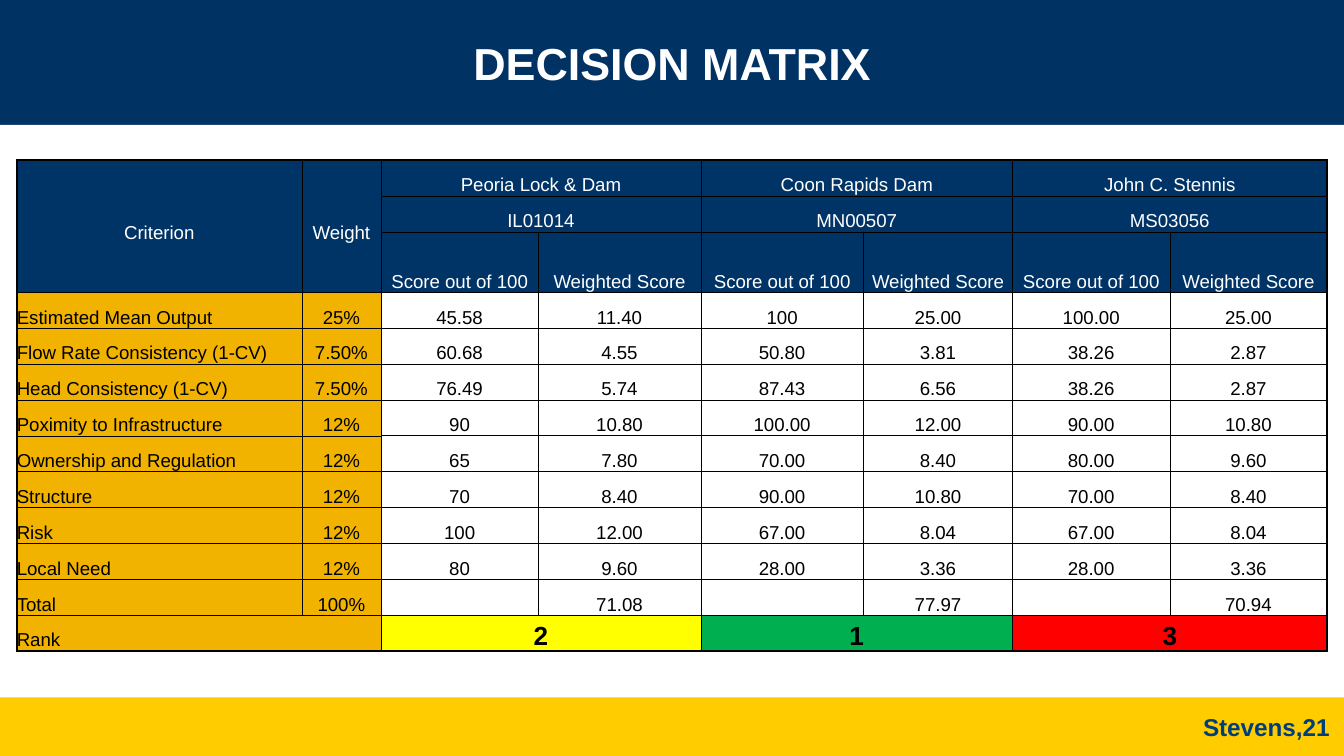
from pptx import Presentation
from pptx.dml.color import RGBColor
from pptx.enum.shapes import MSO_SHAPE
from pptx.enum.text import MSO_ANCHOR, MSO_AUTO_SIZE, PP_ALIGN
from pptx.oxml import parse_xml
from pptx.oxml.ns import nsdecls
from pptx.util import Inches, Pt

COLORS = {
    "banner": "003264", "header": "003366", "footer": "FFCC00",
    "footer_text": "003D7C", "label": "F1B300", "white": "FFFFFF",
    "black": "000000", "second": "FFFF00", "first": "00B050", "third": "FF0000",
}
FONT = "Arial"
NO_STYLE = "{2D5ABB26-0587-4C30-8999-92F81FD0307C}"
COLS = [2.12, 0.59, 1.17, 1.21, 1.21, 1.11, 1.17, 1.17]
LINE = Pt(19.2)
SCORES = ["Score out of 100", "Weighted Score"] * 3
ROWS = [
    ["Criterion", "Weight", "Peoria Lock & Dam", "", "Coon Rapids Dam", "", "John C. Stennis", ""],
    ["", "", "IL01014", "", "MN00507", "", "MS03056", ""],
    ["", ""] + SCORES,
    ["Estimated Mean Output", "25%", "45.58", "11.40", "100", "25.00", "100.00", "25.00"],
    ["Flow Rate Consistency (1-CV)", "7.50%", "60.68", "4.55", "50.80", "3.81", "38.26", "2.87"],
    ["Head Consistency (1-CV)", "7.50%", "76.49", "5.74", "87.43", "6.56", "38.26", "2.87"],
    ["Poximity to Infrastructure", "12%", "90", "10.80", "100.00", "12.00", "90.00", "10.80"],
    ["Ownership and Regulation", "12%", "65", "7.80", "70.00", "8.40", "80.00", "9.60"],
    ["Structure", "12%", "70", "8.40", "90.00", "10.80", "70.00", "8.40"],
    ["Risk", "12%", "100", "12.00", "67.00", "8.04", "67.00", "8.04"],
    ["Local Need", "12%", "80", "9.60", "28.00", "3.36", "28.00", "3.36"],
    ["Total", "100%", "", "71.08", "", "77.97", "", "70.94"],
    ["Rank", "", "2", "", "1", "", "3", ""],
]
HEADER_ROWS = 3
RANK_ROW = len(ROWS) - 1
RANK_FILLS = {2: "second", 4: "first", 6: "third"}
MERGES = [(0, c, HEADER_ROWS, c + 1) for c in (0, 1)]
MERGES += [(r, c, r + 1, c + 2) for r in (0, 1) for c in (2, 4, 6)]
MERGES += [(RANK_ROW, c, RANK_ROW + 1, c + 2) for c in (0, 2, 4, 6)]


def rgb(name):
    return RGBColor.from_string(COLORS[name])


def add_run(p, text, size, color, bold=False):
    r = p.add_run()
    r.text = text
    r.font.name = FONT
    r.font.size = Pt(size)
    r.font.bold = bold
    r.font.color.rgb = rgb(color)


def add_band(slide, top, height, color):
    sp = slide.shapes.add_shape(MSO_SHAPE.RECTANGLE, 0, Inches(top), Inches(10), Inches(height))
    sp.shadow.inherit = False
    sp.fill.solid()
    sp.fill.fore_color.rgb = rgb(color)
    sp.line.fill.background()


def fill_text(sp, text, size, color, align):
    tf = sp.text_frame
    tf.word_wrap = True
    tf.auto_size = MSO_AUTO_SIZE.NONE
    tf.vertical_anchor = MSO_ANCHOR.MIDDLE
    p = tf.paragraphs[0]
    p.alignment = align
    add_run(p, text, size, color, bold=True)


def add_banner(slide, top, height):
    add_band(slide, top, height, "banner")
    add_band(slide, top + height, 0.33, "white")
    title = slide.shapes.title
    title.left, title.top = Inches(0.42), Inches(top)
    title.width, title.height = Inches(9.16), Inches(height)
    fill_text(title, "DECISION MATRIX", 24, "white", PP_ALIGN.CENTER)
    slide.shapes._spTree.append(title._element)


def add_footer(slide, top, height):
    add_band(slide, top, height + 0.01, "footer")
    box = slide.shapes.add_textbox(Inches(7.8), Inches(top), Inches(2.19), Inches(height))
    fill_text(box, "Stevens,21", 13, "footer_text", PP_ALIGN.RIGHT)


def cell_region(row, col):
    for top, left, bottom, right in MERGES:
        if top <= row < bottom and left <= col < right:
            return top, left, bottom, right
    return row, col, row + 1, col + 1


def cell_fill(row, col):
    if row < HEADER_ROWS:
        return "header"
    if col < 2:
        return "label"
    return RANK_FILLS[col // 2 * 2] if row == RANK_ROW else None


def horizontal_width(edge, col):
    if edge in (0, len(ROWS)):
        return 1
    if edge == RANK_ROW:
        return 0.47
    return 0.12 if edge < HEADER_ROWS or col < 2 else 0.23


def vertical_width(edge, row):
    if edge in (0, len(COLS)):
        return 1
    return 0.12 if row < HEADER_ROWS or (edge <= 2 and row < RANK_ROW) else 0.23


def set_borders(cell, row, col):
    top, left, bottom, right = cell_region(row, col)
    widths = {
        "lnL": vertical_width(left, row),
        "lnR": vertical_width(right, row),
        "lnT": horizontal_width(top, col),
        "lnB": horizontal_width(bottom, col),
    }
    tc_pr = cell._tc.get_or_add_tcPr()
    for i, (tag, width) in enumerate(widths.items()):
        tc_pr.insert(i, parse_xml(
            f'<a:{tag} {nsdecls("a")} w="{int(Pt(width))}"><a:solidFill>'
            f'<a:srgbClr val="{COLORS["black"]}"/></a:solidFill></a:{tag}>'))


def format_cell(cell, row, col, text):
    cell.margin_left = cell.margin_right = cell.margin_top = cell.margin_bottom = 0
    tall = row == 0 and col < 2
    cell.vertical_anchor = MSO_ANCHOR.MIDDLE if tall else MSO_ANCHOR.BOTTOM
    color = cell_fill(row, col)
    if color:
        cell.fill.solid()
        cell.fill.fore_color.rgb = rgb(color)
    else:
        cell.fill.background()
    set_borders(cell, row, col)
    p = cell.text_frame.paragraphs[0]
    p.line_spacing = LINE
    is_label = col == 0 and row >= HEADER_ROWS
    p.alignment = PP_ALIGN.LEFT if is_label else PP_ALIGN.CENTER
    if text:
        is_rank = row == RANK_ROW and col >= 2
        add_run(p, text, 14 if is_rank else 10,
                "white" if row < HEADER_ROWS else "black", is_rank)
    else:
        p._p.append(parse_xml(f'<a:endParaRPr {nsdecls("a")} sz="1000"/>'))


def add_matrix(slide, left, top, width, height):
    frame = slide.shapes.add_table(len(ROWS), len(COLS), left, top, width, height)
    table = frame.table
    table.first_row = table.horz_banding = False
    table._tbl.tblPr[0].text = NO_STYLE
    for column, col_width in zip(table.columns, COLS):
        column.width = Inches(col_width)
    for i, row in enumerate(table.rows):
        row.height = Inches(0.45) if i == HEADER_ROWS - 1 else LINE
    for r, texts in enumerate(ROWS):
        for c, text in enumerate(texts):
            format_cell(table.cell(r, c), r, c, text)
    for r, c, bottom, right in MERGES:
        table.cell(r, c).merge(table.cell(bottom - 1, right - 1))


def main():
    prs = Presentation()
    prs.slide_width = Inches(10)
    prs.slide_height = prs.slide_width * 9 // 16
    slide = prs.slides.add_slide(prs.slide_layouts[5])
    add_banner(slide, 0, 0.93)
    add_footer(slide, 5.19, 0.43)
    table_width = Inches(sum(COLS))
    add_matrix(slide, (prs.slide_width - table_width) // 2, Inches(1.19),
               table_width, Inches(3.64))
    prs.save("out.pptx")


if __name__ == "__main__":
    main()
